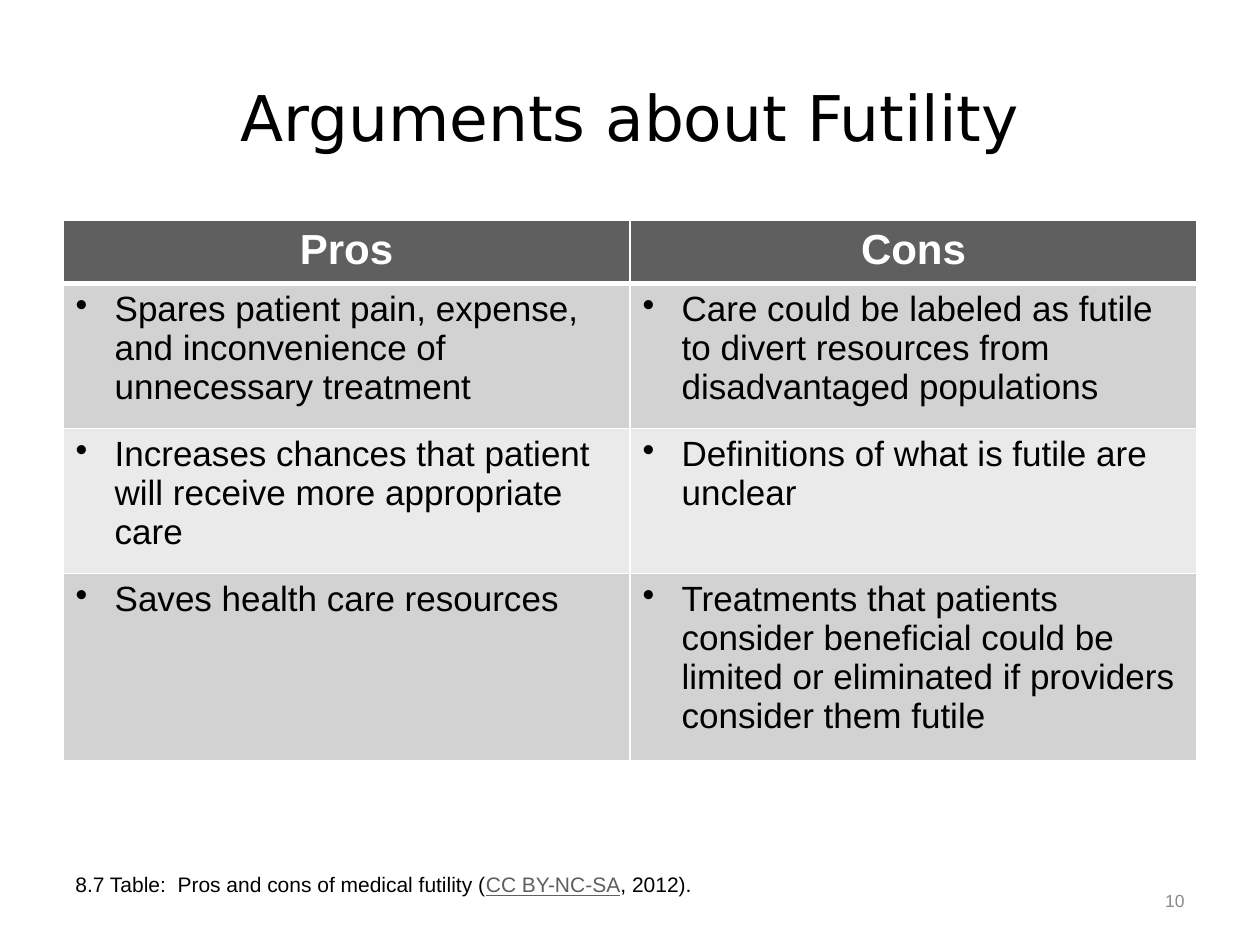
from lxml import etree
from pptx import Presentation
from pptx.dml.color import RGBColor
from pptx.enum.text import MSO_ANCHOR, PP_ALIGN
from pptx.oxml.ns import qn
from pptx.util import Inches, Pt

LEFT, CENTER, RIGHT = PP_ALIGN.LEFT, PP_ALIGN.CENTER, PP_ALIGN.RIGHT
TOP, MIDDLE = MSO_ANCHOR.TOP, MSO_ANCHOR.MIDDLE
COLUMN, ROW = Inches(0.5), Inches(0.25)
COLORS = {
    "text": "000000",
    "white": "FFFFFF",
    "header": "5F5F5F",
    "odd": "D2D2D2",
    "even": "EAEAEA",
    "number": "898989",
}
HEADINGS = ["Pros", "Cons"]
ARGUMENTS = [
    ["Spares patient pain, expense,  and inconvenience of unnecessary treatment",
     "Care could be labeled as futile to divert resources from disadvantaged populations"],
    ["Increases chances that patient will receive more appropriate care",
     "Definitions of what is futile are unclear"],
    ["Saves health care resources",
     "Treatments that patients consider beneficial could be limited or eliminated "
     "if providers consider them futile"],
]


def color(name):
    return RGBColor.from_string(COLORS[name])


class SlideBuilder:
    def __init__(self, slide):
        self.slide = slide

    def place(self, left, top, width, height):
        return [int(left * COLUMN), int(top * ROW), int(width * COLUMN), int(height * ROW)]

    def style(self, paragraph, size, ink="text", align=LEFT, font="Arial", bold=False):
        paragraph.alignment = align
        paragraph.font.name = font
        paragraph.font.size = Pt(size)
        paragraph.font.bold = bold
        paragraph.font.color.rgb = color(ink)

    def text(self, area, parts, size, anchor=TOP, **style):
        frame = self.slide.shapes.add_textbox(*self.place(*area)).text_frame
        frame.word_wrap = True
        frame.vertical_anchor = anchor
        paragraph = frame.paragraphs[0]
        for part in parts:
            paragraph.add_run().text = part
        self.style(paragraph, size, **style)
        return paragraph

    def table(self, area, headings, body, row_heights):
        rows = [headings] + body
        frame = self.slide.shapes.add_table(len(rows), len(headings), *self.place(*area))
        table = frame.table
        for row, height in zip(table.rows, row_heights):
            row.height = int(height * ROW)
        for row_index, texts in enumerate(rows):
            for column_index, text in enumerate(texts):
                self.cell(table.cell(row_index, column_index), text, row_index)

    def cell(self, cell, text, row_index):
        is_header = row_index == 0
        self.borders(cell, top=3 if row_index == 1 else 1, bottom=3 if is_header else 1)
        cell.fill.solid()
        fill = "header" if is_header else "odd" if row_index % 2 else "even"
        cell.fill.fore_color.rgb = color(fill)
        cell.text = text
        paragraph = cell.text_frame.paragraphs[0]
        if is_header:
            self.style(paragraph, 24, ink="white", align=CENTER, bold=True)
        else:
            self.style(paragraph, 20)
            self.bullet(paragraph, Inches(0.31))

    def borders(self, cell, top, bottom):
        properties = cell._tc.get_or_add_tcPr()
        for side, width in (("L", 1), ("R", 1), ("T", top), ("B", bottom)):
            line = etree.SubElement(properties, qn("a:ln" + side), w=str(Pt(width)))
            fill = etree.SubElement(line, qn("a:solidFill"))
            etree.SubElement(fill, qn("a:srgbClr"), val=COLORS["white"])

    def bullet(self, paragraph, indent):
        properties = paragraph._p.get_or_add_pPr()
        properties.set("marL", str(indent))
        properties.set("indent", str(-indent))
        character = etree.Element(qn("a:buChar"), char="•")
        properties.insert(0, character)


def main():
    presentation = Presentation()
    presentation.slide_width = 20 * COLUMN
    presentation.slide_height = 30 * ROW
    builder = SlideBuilder(presentation.slides.add_slide(presentation.slide_layouts[6]))

    builder.text((1, 1.2, 18, 5), ["Arguments about Futility"], 36,
                 anchor=MIDDLE, align=CENTER, font="DejaVu Sans")
    builder.table((1, 7, 18, 17.04), HEADINGS, ARGUMENTS, [1.88, 4.6, 4.6, 5.96])
    caption = builder.text(
        (1, 27.48, 16.7, 2.32),
        ["8.7 Table:  Pros and cons of medical futility (", "CC BY-NC-SA", ", 2012)."], 12)
    license_run = caption.runs[1]
    license_run.font.underline = True
    license_run.font.color.rgb = color("header")
    builder.text((17.88, 27.4, 1.12, 2.4), ["10"], 10,
                 anchor=MIDDLE, align=RIGHT, ink="number")
    presentation.save("out.pptx")


if __name__ == "__main__":
    main()
